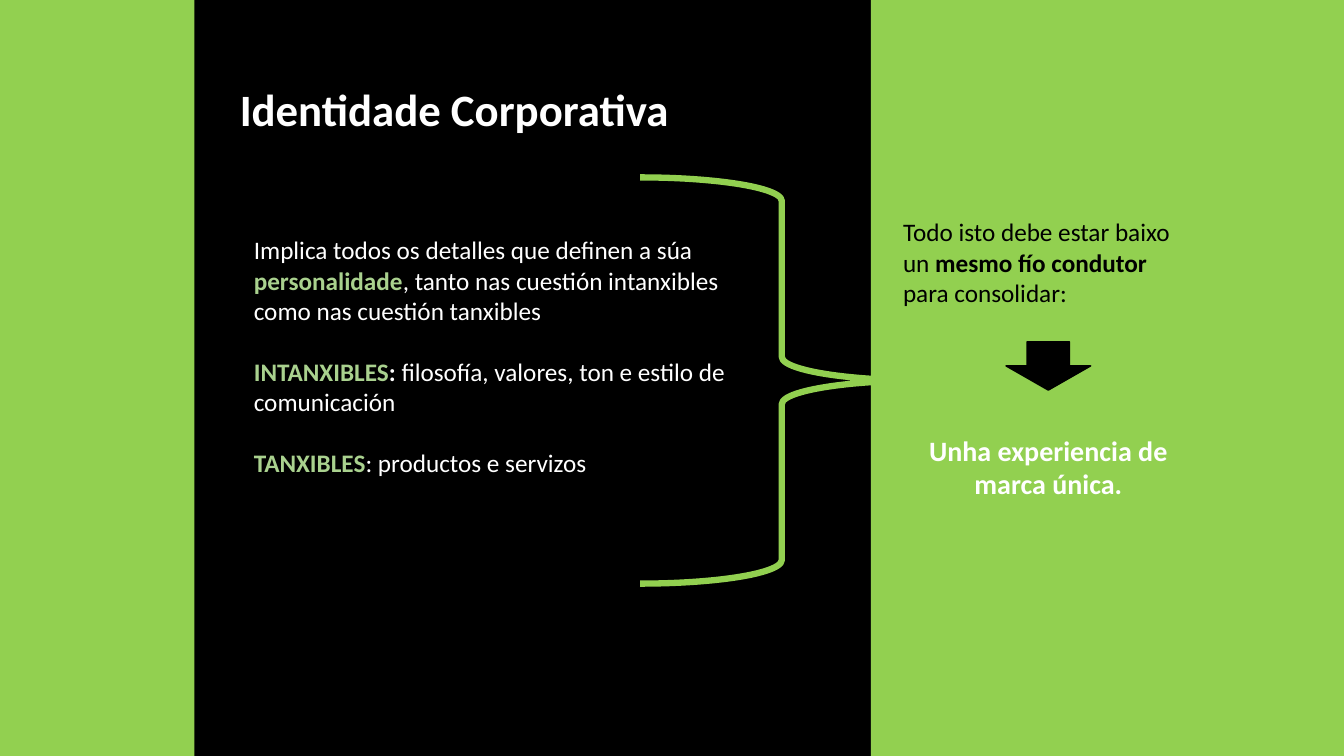
from pptx import Presentation
from pptx.dml.color import RGBColor
from pptx.enum.shapes import MSO_SHAPE
from pptx.enum.text import MSO_AUTO_SIZE, PP_ALIGN
from pptx.util import Inches, Pt

BLACK, WHITE, GREEN, SAGE = "000000", "FFFFFF", "92D050", "A9D18E"
FONT = "Calibri"
LEFT, CENTER = PP_ALIGN.LEFT, PP_ALIGN.CENTER

# Shapes: preset, (left, top, width, height) in percent of the slide, fill, line, line width
SHAPES = [
    (MSO_SHAPE.RECTANGLE, (0, 0, 14.47, 100), GREEN, None, 0),
    (MSO_SHAPE.RECTANGLE, (64.8, 0, 35.2, 100), GREEN, None, 0),
    (MSO_SHAPE.RIGHT_BRACE, (47.63, 23.47, 21.08, 53.73), None, GREEN, 4.5),
    (MSO_SHAPE.DOWN_ARROW, (74.85, 45.2, 6.3, 6.4), BLACK, BLACK, 1),
]

# Texts: place in percent, wrap, paragraphs of (space before, alignment, size, spans)
# Each span is (text, colour, bold)
TEXTS = [
    ((17.1, 10.13, 34.5, 8.53), False, [
        (0, LEFT, 32, [("Identidade Corporativa", WHITE, True)]),
    ]),
    ((18.15, 30.4, 37.28, 37.73), True, [
        (0, LEFT, 18, [
            ("Implica todos os detalles que definen a súa ", WHITE, False),
            ("personalidade", SAGE, True),
            (", tanto nas cuestión intanxibles como nas cuestión tanxibles", WHITE, False),
        ]),
        (22, LEFT, 18, [
            ("INTANXIBLES", SAGE, True),
            (": ", WHITE, True),
            ("filosofía, valores, ton e estilo de comunicación", WHITE, False),
        ]),
        (22, LEFT, 18, [
            ("TANXIBLES", SAGE, True),
            (": productos e servizos", WHITE, False),
        ]),
    ]),
    ((66.45, 28, 23.1, 47.07), True, [
        (0, LEFT, 18, [
            ("Todo isto debe estar baixo un ", BLACK, False),
            ("mesmo fío condutor ", BLACK, True),
            ("para consolidar:", BLACK, False),
        ]),
        (90, CENTER, 20, [("Unha experiencia de marca única.", WHITE, True)]),
    ]),
]

deck = Presentation()
deck.slide_width, deck.slide_height = Inches(13.33), Inches(7.5)
page = deck.slides.add_slide(deck.slide_layouts[6])


def paint(fill, colour):
    if colour is None:
        fill.background()
    else:
        fill.solid()
        fill.fore_color.rgb = RGBColor.from_string(colour)


def place(percents):
    sides = (deck.slide_width, deck.slide_height) * 2
    return [round(side * percent / 100) for side, percent in zip(sides, percents)]


def add_shape(preset, percents, fill, line, width):
    shape = page.shapes.add_shape(preset, *place(percents))
    shape.shadow.inherit = False
    paint(shape.fill, fill)
    paint(shape.line.fill, line)
    if line:
        shape.line.width = Pt(width)


def add_text(percents, wrap, paragraphs):
    frame = page.shapes.add_textbox(*place(percents)).text_frame
    frame.word_wrap = wrap
    frame.auto_size = MSO_AUTO_SIZE.SHAPE_TO_FIT_TEXT
    for index, (before, alignment, size, spans) in enumerate(paragraphs):
        para = frame.add_paragraph() if index else frame.paragraphs[0]
        para.alignment = alignment
        if before:
            para.space_before = Pt(before)
        for text, colour, bold in spans:
            span = para.add_run()
            span.text = text
            span.font.name, span.font.size, span.font.bold = FONT, Pt(size), bold
            paint(span.font.fill, colour)


# Background, panels and symbols
paint(page.background.fill, BLACK)
for item in SHAPES:
    add_shape(*item)

# Title and copy
for item in TEXTS:
    add_text(*item)

deck.save("out.pptx")
